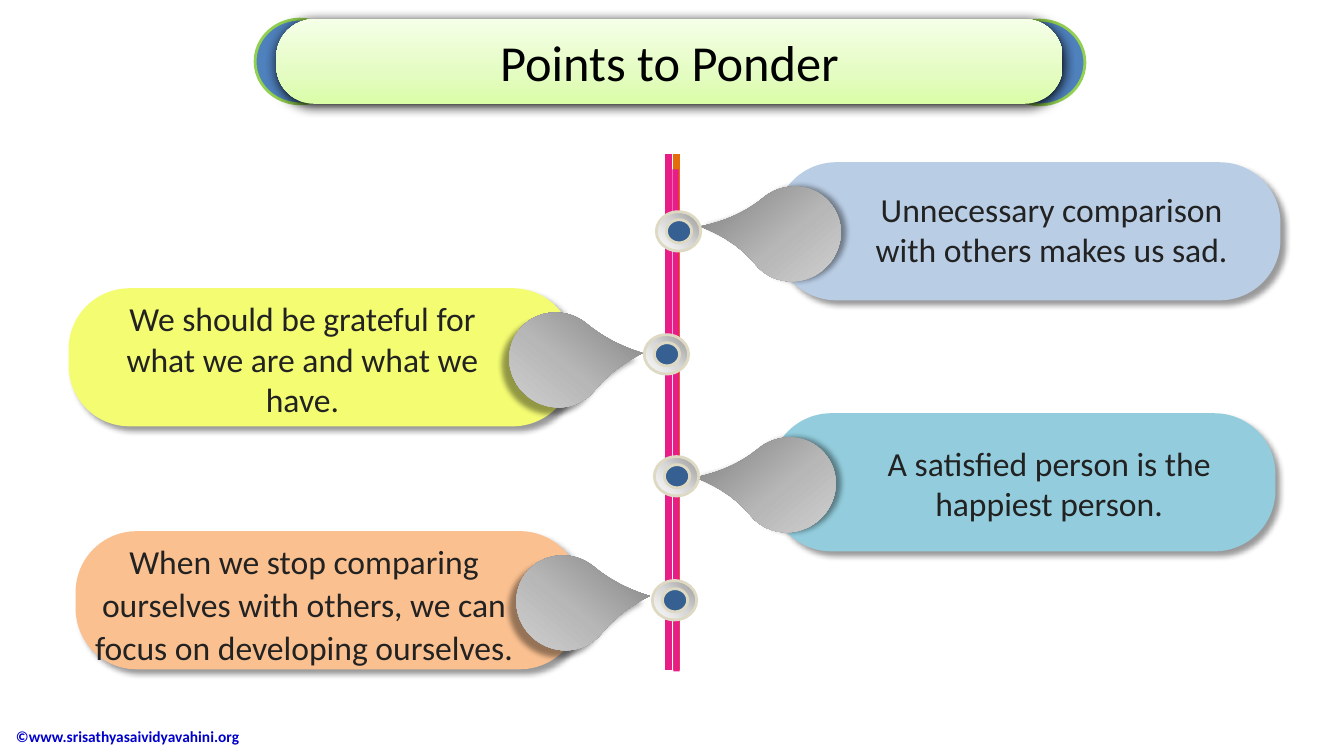
from lxml import etree
from pptx import Presentation
from pptx import util as u
from pptx.dml.color import RGBColor
from pptx.enum import shapes, text
from pptx.oxml.ns import qn

KIND = shapes.MSO_SHAPE
GREY = [(0, "808080"), (50, "B7B7B7"), (100, "D9D9D9")]
SILVER = [(0, "979797"), (50, "D7D7D7"), (100, "FFFFFF")]
GREEN = [(0, "DAFDA7"), (35, "E4FCC2"), (100, "F5FFE7")]
SAND = "DDD9C3"
POINTS = [
    ("Unnecessary comparison with others makes us sad.",
     "B9CDE5", False, (7.69, 1.61), (6.51, 2.1), (8.32, 1.82, 4.22, 0.91)),
    ("We should be grateful for what we are and what we have.",
     "F4FC72", True, (0.68, 2.86), (6.39, 3.32), (0.9, 2.91, 4.2, 1.31)),
    ("A satisfied person is the happiest person.",
     "93CDDD", False, (7.64, 4.1), (6.49, 4.53), (8.41, 4.34, 3.99, 0.91)),
    ("When we stop comparing ourselves with others, we can focus on "
     "developing ourselves.",
     "FAC090", True, (0.75, 5.27), (6.47, 5.76), (0.52, 5.29, 4.99, 1.38)),
]


def color(code):
    """Turn a hex string into a colour."""
    return RGBColor.from_string(code)


def blend(shape, stops, angle):
    """Fill a shape with a linear gradient, angle clockwise."""
    shape.fill.gradient()
    shape.fill.gradient_angle = (360 - angle) % 360
    group = shape.element.spPr.find(qn("a:gradFill")).find(qn("a:gsLst"))
    for old in list(group):
        group.remove(old)
    for place, code in stops:
        stop = etree.SubElement(group, qn("a:gs"), pos=str(place * 1000))
        etree.SubElement(stop, qn("a:srgbClr"), val=code)


def shade(shape, alpha, blur, dist, angle):
    """Give a shape an outer shadow in black."""
    effects = shape.element.spPr.find(qn("a:effectLst"))
    outer = etree.SubElement(
        effects, qn("a:outerShdw"), blurRad=str(u.Pt(blur)),
        dist=str(u.Pt(dist)), dir=str(angle * 60000), algn="ctr",
        rotWithShape="0")
    black = etree.SubElement(outer, qn("a:srgbClr"), val="000000")
    etree.SubElement(black, qn("a:alpha"), val=str(alpha * 1000))


def form(slide, kind, box, fill=None, line=None, adjust=None, flip=False):
    """Add a preset shape with a solid fill and an optional outline."""
    shape = slide.shapes.add_shape(kind, *map(u.Inches, box))
    shape.shadow.inherit = False
    if fill:
        shape.fill.solid()
        shape.fill.fore_color.rgb = color(fill)
    if line:
        shape.line.color.rgb = color(line)
        shape.line.width = u.Pt(2)
    else:
        shape.line.fill.background()
    if adjust is not None:
        shape.adjustments[0] = adjust
    if flip:
        shape.element.spPr.find(qn("a:xfrm")).set("flipH", "1")
    return shape


def write(shape, words, size, code, align=text.PP_ALIGN.CENTER):
    """Put one wrapped paragraph in a shape and return it."""
    frame = shape.text_frame
    frame.word_wrap = True
    para = frame.paragraphs[0]
    para.text = words
    para.alignment = align
    para.font.name = "Calibri"
    para.font.size = u.Pt(size)
    para.font.color.rgb = color(code)
    return para


def label(slide, box, *style):
    """Add a text box holding one paragraph."""
    return write(slide.shapes.add_textbox(*map(u.Inches, box)), *style)


def rail(slide, start, end, code):
    """Draw one stripe of the central rail."""
    line = slide.shapes.add_connector(
        shapes.MSO_CONNECTOR.STRAIGHT, *map(u.Inches, start + end))
    line.line.color.rgb = color(code)
    line.line.width = u.Pt(4.5)
    etree.SubElement(line.element.spPr, qn("a:effectLst"))


def banner(slide, words):
    """Draw the title plate over its two round ends."""
    for left, top in ((9.87, 0.2), (2.53, 0.19)):
        form(slide, KIND.OVAL, (left, top, 0.89, 0.84), "4F81BD", "92D050")
    plate = form(slide, KIND.ROUNDED_RECTANGLE, (2.74, 0.19, 7.8, 0.84),
                 adjust=0.45)
    blend(plate, GREEN, 270)
    shade(plate, 100, 8.5, 1, 90)
    write(plate, words, 36, "000000")
    plate.text_frame.vertical_anchor = text.MSO_ANCHOR.MIDDLE


def point(slide, words, fill, flip, card, eye, box):
    """Draw a card with its drop, eye and wording."""
    x, y = card
    plate = form(slide, KIND.ROUNDED_RECTANGLE, (x, y, 5.01, 1.37), fill,
                 adjust=0.441, flip=flip)
    shade(plate, 40, 4, 5, 45)

    shift, turn, tip = (4.38, 129.5, 1.277) if flip else (-0.29, 230.5, 1.389)
    drop = form(slide, KIND.TEAR, (x + shift, y + 0.23, 0.93, 0.96),
                adjust=tip, flip=flip)
    drop.rotation = turn
    blend(drop, GREY, 180)
    shade(drop, 40, 4, *((7, 135) if flip else (4, 0)))

    x, y = eye
    ring = form(slide, KIND.OVAL, (x, y, 0.44, 0.39), line=SAND)
    blend(ring, SILVER, 135)
    form(slide, KIND.OVAL, (x + 0.1, y + 0.08, 0.25, 0.23), "376092", SAND)
    return label(slide, box, words, 24, "222222")


def main():
    """Build the slide and save it."""
    deck = Presentation()
    deck.slide_width, deck.slide_height = u.Inches(13.33), u.Inches(7.5)
    slide = deck.slides.add_slide(deck.slide_layouts[6])

    credit = label(slide, (0.06, 7.16, 3.53, 0.28),
                   "©www.srisathyasaividyavahini.org", 11, "0000CC",
                   text.PP_ALIGN.LEFT)
    credit.font.bold = True
    banner(slide, "Points to Ponder")
    rail(slide, (6.71, 1.53), (6.71, 6.65), "E46C0A")
    rail(slide, (6.63, 1.53), (6.63, 6.65), "E91D88")
    rail(slide, (6.7, 1.68), (6.71, 6.66), "E91D88")
    for item in POINTS:
        para = point(slide, *item)
    para.line_spacing = 1.07
    para.space_after = u.Pt(8)
    deck.save("out.pptx")


if __name__ == "__main__":
    main()
